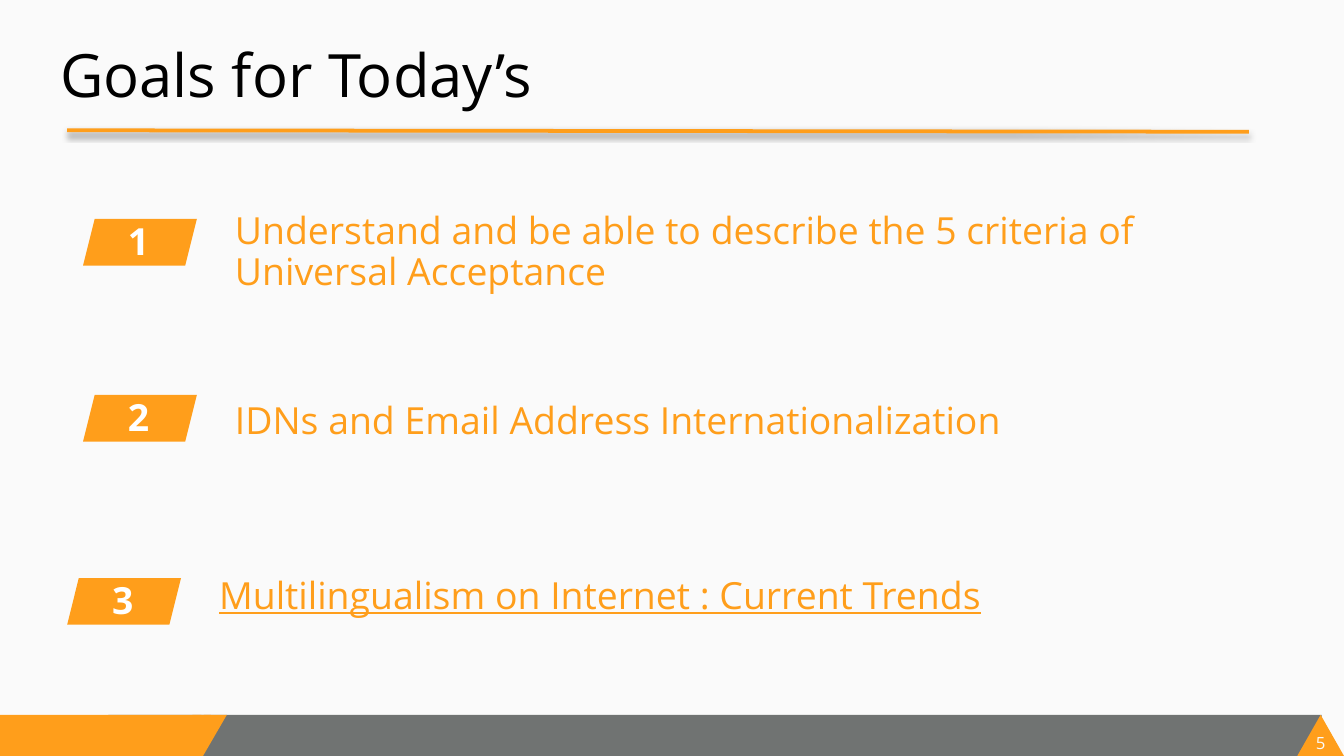
from dataclasses import dataclass

from lxml import etree
from pptx import Presentation
from pptx.dml.color import RGBColor
from pptx.enum.shapes import MSO_CONNECTOR, MSO_SHAPE as Shape
from pptx.enum.text import MSO_ANCHOR as Anchor, MSO_AUTO_SIZE as AutoSize, PP_ALIGN as Align
from pptx.oxml.ns import qn
from pptx.util import Pt


@dataclass(frozen=True)
class Theme:
    font: str = "Open Sans"
    background: str = "FAFAFA"
    accent: str = "FF9E1B"
    footer: str = "707372"
    title: str = "000000"
    badge_text: str = "FFFFFF"
    title_size: int = 32
    body_size: int = 20
    number_size: int = 9


class SlideBuilder:
    def __init__(self, presentation, theme):
        self.theme = theme
        self.slide = presentation.slides.add_slide(presentation.slide_layouts[5])
        fill = self.slide.background.fill
        fill.solid()
        fill.fore_color.rgb = RGBColor.from_string(theme.background)

    def add_text(self, paragraph, text, size, color, bold=False, underline=None):
        run = paragraph.add_run()
        run.text = text
        font = run.font
        font.name, font.size = self.theme.font, Pt(size)
        font.bold, font.underline = bold, underline
        font.color.rgb = RGBColor.from_string(color)

    def frame(self, shape, insets, anchor, wrap=True, auto_size=AutoSize.NONE):
        frame = shape.text_frame
        frame.margin_left, frame.margin_top, frame.margin_right, frame.margin_bottom = map(Pt, insets)
        frame.vertical_anchor = anchor
        frame.word_wrap = wrap
        frame.auto_size = auto_size
        return frame.paragraphs[0]

    def title(self, text, *box):
        shape = self.slide.shapes.title
        shape.left, shape.top, shape.width, shape.height = map(Pt, box)
        paragraph = self.frame(shape, (7.2, 3.6, 7.2, 3.6), Anchor.TOP)
        paragraph.alignment = Align.LEFT
        self.add_text(paragraph, text, self.theme.title_size, self.theme.title)

    def block(self, kind, box, color, shapes=None):
        shapes = self.slide.shapes if shapes is None else shapes
        shape = shapes.add_shape(kind, *map(Pt, box))
        shape.shadow.inherit = False
        shape.fill.solid()
        shape.fill.fore_color.rgb = RGBColor.from_string(color)
        shape.line.fill.background()
        return shape

    def rule(self, *ends):
        line = self.slide.shapes.add_connector(MSO_CONNECTOR.STRAIGHT, *map(Pt, ends))
        line.line.color.rgb = RGBColor.from_string(self.theme.accent)
        line.line.width = Pt(2)
        # Soft shadow straight below the line
        effects = etree.SubElement(line._element.spPr, qn("a:effectLst"))
        shadow = etree.SubElement(effects, qn("a:outerShdw"), blurRad=str(Pt(3.1)),
                                  dist=str(Pt(1.6)), dir="5400000", rotWithShape="0")
        black = etree.SubElement(shadow, qn("a:srgbClr"), val="000000")
        etree.SubElement(black, qn("a:alpha"), val="38000")

    def page_number(self, text, *box):
        shape = self.slide.shapes.add_textbox(*map(Pt, box))
        paragraph = self.frame(shape, (0, 0, 0, 0), Anchor.TOP, False, AutoSize.SHAPE_TO_FIT_TEXT)
        paragraph.alignment = Align.CENTER
        self.add_text(paragraph, text, self.theme.number_size, self.theme.background)

    def goal(self, number, text, left, badge_top, text_top, text_height, underline=None):
        theme = self.theme
        shapes = self.slide.shapes.add_group_shape().shapes
        # Goal text
        label = shapes.add_textbox(Pt(left + 67), Pt(text_top), Pt(548), Pt(text_height))
        paragraph = self.frame(label, (14.4, 3.6, 2.2, 3.6), Anchor.MIDDLE,
                               auto_size=AutoSize.SHAPE_TO_FIT_TEXT)
        paragraph.line_spacing = 0.9
        self.add_text(paragraph, text, theme.body_size, theme.accent, underline=underline)
        # Numbered badge
        badge = self.block(Shape.PARALLELOGRAM, (left, badge_top, 61, 25), theme.accent, shapes)
        paragraph = self.frame(badge, (5, 3, 14.4, 5), Anchor.MIDDLE)
        paragraph._p.get_or_add_pPr().set("marL", str(Pt(8)))
        paragraph.alignment = Align.CENTER
        paragraph.line_spacing = Pt(23.8)
        self.add_text(paragraph, str(number), theme.body_size, theme.badge_text, bold=True)

    def footer(self, number):
        theme, top, height = self.theme, 383, 22
        self.block(Shape.RECTANGLE, (58, top, 650, height), theme.footer)
        self.block(Shape.RECTANGLE, (0, top, 108, height), theme.accent)
        self.block(Shape.ISOSCELES_TRIANGLE, (695, top, 25, height), theme.accent)
        self.page_number(number, 701.5, 392.4, 12, 11)
        slant = self.block(Shape.PARALLELOGRAM, (96.5, top, 25, height), theme.accent)
        slant.adjustments[0] = 0.58
        slant.rotation = 180
        self.block(Shape.RECTANGLE, (103, top, 10, 4), theme.accent)


def main():
    presentation = Presentation()
    presentation.slide_width, presentation.slide_height = Pt(720), Pt(405)
    builder = SlideBuilder(presentation, Theme())

    builder.footer("5")
    builder.title("Goals for Today’s", 25, 16.5, 665, 68)
    builder.rule(36, 69.8, 669, 70.6)

    # Goals: text, left, badge top, text top, text height, underline
    goals = [
        ("Understand and be able to describe the 5 criteria of Universal Acceptance",
         44.5, 117.3, 110, 51, None),
        ("IDNs and Email Address Internationalization", 44.5, 211.6, 211.6, 29, None),
        ("Multilingualism on Internet : Current Trends", 36, 309.7, 305.5, 29, True),
    ]
    for number, goal in enumerate(goals, 1):
        builder.goal(number, *goal)

    presentation.save("out.pptx")


if __name__ == "__main__":
    main()
